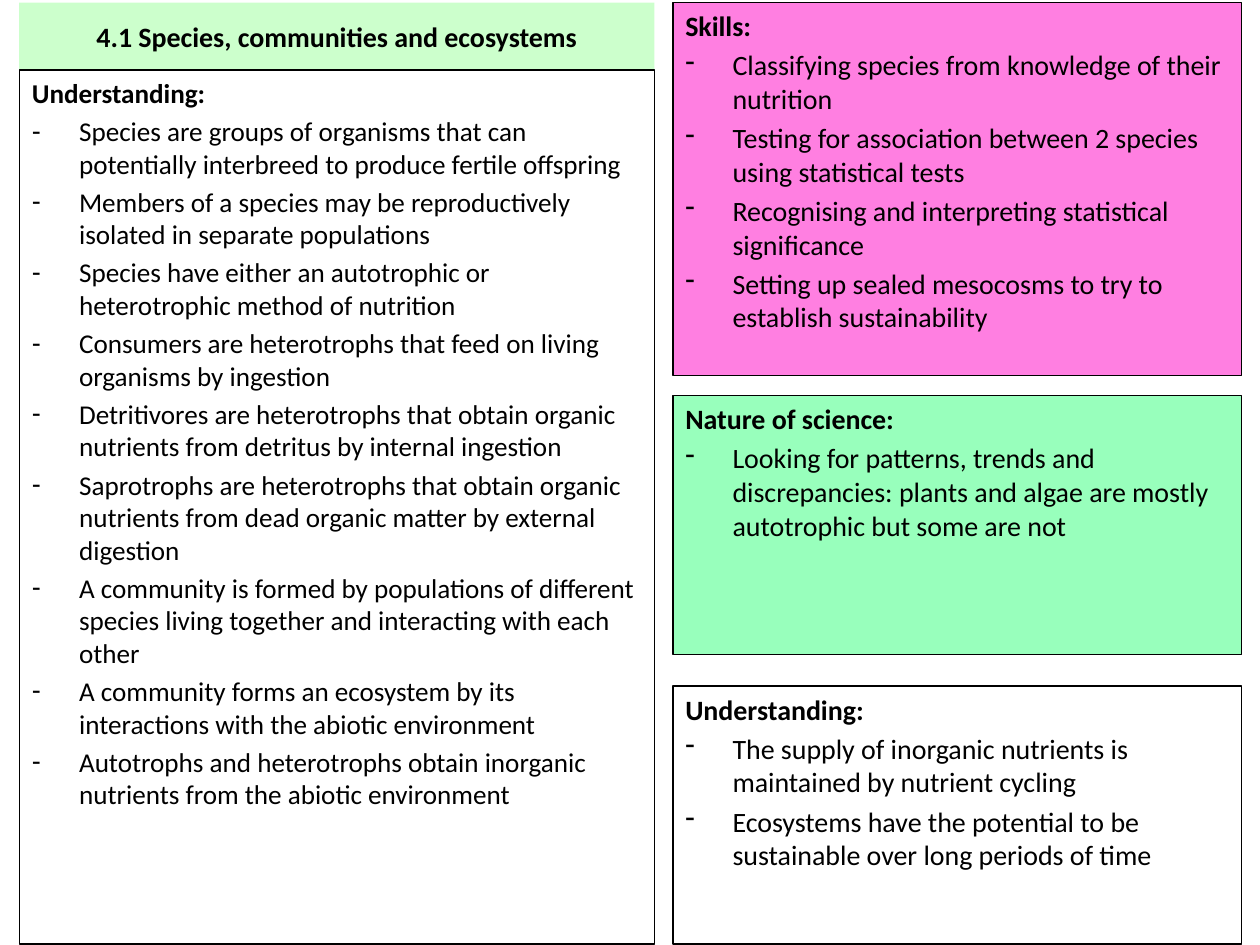
from dataclasses import dataclass

from lxml import etree
from pptx import Presentation
from pptx.dml.color import RGBColor
from pptx.enum import shapes, text
from pptx.oxml import ns
from pptx.util import Pt


@dataclass(frozen=True)
class Theme:
    font: str = "Calibri"
    ink: RGBColor = RGBColor.from_string("000000")
    title_fill: RGBColor = RGBColor.from_string("CCFFCC")
    skills_fill: RGBColor = RGBColor.from_string("FF7FE1")
    science_fill: RGBColor = RGBColor.from_string("98FFBC")
    size: float = 16
    body_size: float = 15.5


theme = Theme()


def place(box, left, top, width, height, fill=None):
    box.left, box.top, box.width, box.height = map(Pt, (left, top, width, height))
    if fill is None:
        box.fill.background()
    else:
        box.fill.solid()
        box.fill.fore_color.rgb = fill
    box.text_frame.word_wrap = True
    box.text_frame.auto_size = text.MSO_AUTO_SIZE.NONE


def write(box, lines, size, align=text.PP_ALIGN.LEFT):
    frame = box.text_frame
    for index, line in enumerate(lines):
        para = frame.add_paragraph() if index else frame.paragraphs[0]
        para.text = line
        para.alignment = align
        para.space_before = Pt(3.2 if index else 0)
        props = para._p.get_or_add_pPr()
        indent = Pt(27) if index else 0
        props.set("marL", str(indent))
        props.set("indent", str(-indent))
        if index:
            etree.SubElement(props, ns.qn("a:buChar")).set("char", "-")
        else:
            etree.SubElement(props, ns.qn("a:buNone"))
        para.font.name = theme.font
        para.font.size = Pt(size)
        para.font.bold = index == 0
        para.font.color.rgb = theme.ink


deck = Presentation()
deck.slide_width, deck.slide_height = Pt(720), Pt(540)
page = deck.slides.add_slide(deck.slide_layouts[1])

title = page.shapes.title
place(title, 11, 1.5, 363, 38.5, theme.title_fill)
title.text_frame.vertical_anchor = text.MSO_ANCHOR.MIDDLE
write(title, ["4.1 Species, communities and ecosystems"], theme.size, text.PP_ALIGN.CENTER)

body = page.placeholders[1]
place(body, 11, 40, 363, 499.5)
body.line.color.rgb = theme.ink
body.line.width = Pt(0.75)
body.text_frame.vertical_anchor = text.MSO_ANCHOR.TOP
write(body, [
    "Understanding:",
    "Species are groups of organisms that can potentially interbreed to produce fertile offspring",
    "Members of a species may be reproductively isolated in separate populations",
    "Species have either an autotrophic or heterotrophic method of nutrition",
    "Consumers are heterotrophs that feed on living organisms by ingestion",
    "Detritivores are heterotrophs that obtain organic nutrients from detritus by internal ingestion",
    "Saprotrophs are heterotrophs that obtain organic nutrients from dead organic matter by external digestion",
    "A community is formed by populations of different species living together and interacting with each other",
    "A community forms an ecosystem by its interactions with the abiotic environment",
    "Autotrophs and heterotrophs obtain inorganic nutrients from the abiotic environment",
], theme.body_size)

panels = [
    (1.5, 213, theme.skills_fill, [
        "Skills:",
        "Classifying species from knowledge of their nutrition",
        "Testing for association between 2 species using statistical tests",
        "Recognising and interpreting statistical significance",
        "Setting up sealed mesocosms to try to establish sustainability",
    ]),
    (226, 148, theme.science_fill, [
        "Nature of science:",
        "Looking for patterns, trends and discrepancies: plants and algae are mostly "
        "autotrophic but some are not",
    ]),
    (392, 147.5, None, [
        "Understanding:",
        "The supply of inorganic nutrients is maintained by nutrient cycling",
        "Ecosystems have the potential to be sustainable over long periods of time",
    ]),
]
for top, height, fill, lines in panels:
    panel = page.shapes.add_shape(shapes.MSO_SHAPE.RECTANGLE, 0, 0, 0, 0)
    place(panel, 384.5, top, 325, height, fill)
    panel.shadow.inherit = False
    panel.line.color.rgb = theme.ink
    panel.line.width = Pt(0.75)
    panel.text_frame.vertical_anchor = text.MSO_ANCHOR.TOP
    write(panel, lines, theme.size)

deck.save("out.pptx")
